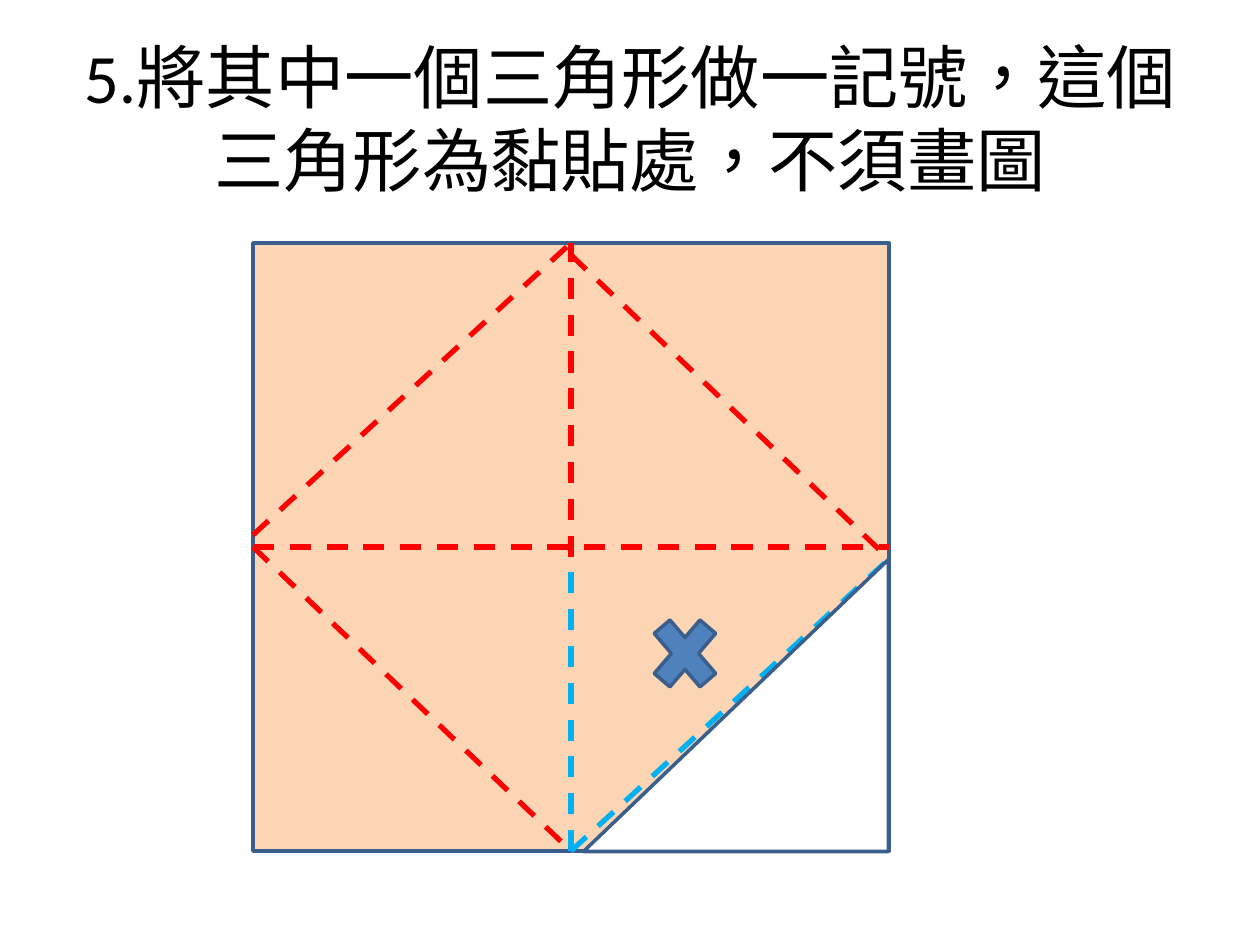
from lxml.etree import SubElement
from pptx import Presentation
from pptx.dml.color import RGBColor
from pptx.enum.dml import MSO_LINE
from pptx.enum.lang import MSO_LANGUAGE_ID
from pptx.enum.shapes import MSO_CONNECTOR, MSO_SHAPE
from pptx.enum.text import MSO_ANCHOR, PP_ALIGN
from pptx.oxml.ns import qn
from pptx.util import Emu, Pt

THEME = {
    "font": "Calibri", "title_size": Pt(39.6), "title": RGBColor.from_string("000000"),
    "paper": RGBColor.from_string("FCD5B5"), "cutout": RGBColor.from_string("FFFFFF"),
    "mark": RGBColor.from_string("4F81BD"), "outline": RGBColor.from_string("3A5F8C"),
    "fold": RGBColor.from_string("FF0000"), "glue": RGBColor.from_string("00B0F0"),
    "outline_width": Pt(2), "fold_width": Pt(3),
}


def px(count):
    return Emu(round(count * 914400 / 126))


def add_outlined(kind, left, top, width, height, fill):
    shape = page.shapes.add_shape(kind, px(left), px(top), px(width), px(height))
    shape.shadow.inherit = False
    shape.fill.solid()
    shape.fill.fore_color.rgb = THEME[fill]
    shape.line.color.rgb = THEME["outline"]
    shape.line.width = THEME["outline_width"]
    return shape


deck = Presentation()
deck.slide_width, deck.slide_height = px(1260), px(945)
page = deck.slides.add_slide(deck.slide_layouts[6])

box = page.shapes.add_textbox(px(63), px(38), px(1134), px(158))
frame = box.text_frame
frame.word_wrap = True
frame.vertical_anchor = MSO_ANCHOR.MIDDLE
para = frame.paragraphs[0]
para.alignment = PP_ALIGN.CENTER
span = para.add_run()
span.text = "5.將其中一個三角形做一記號，這個三角形為黏貼處，不須畫圖"
title_format = {"name": THEME["font"], "size": THEME["title_size"],
                "language_id": MSO_LANGUAGE_ID.TRADITIONAL_CHINESE}
for name, value in title_format.items():
    setattr(span.font, name, value)
span.font.color.rgb = THEME["title"]

left, top, width, height = 253, 243, 636, 608
right, bottom = left + width, top + height
center, middle = left + width // 2, top + height // 2
offset = 12
paper = add_outlined(MSO_SHAPE.RECTANGLE, left, top, width, height, "paper")

side_middles = {(center, top): 0, (left, middle): 1, (center, bottom): 2, (right, middle): 3}
folds = [
    ((left, middle), (right, middle), "fold"),
    ((center, bottom), (center, top), "fold"),
    ((left, middle), (center, bottom), "fold"),
    ((center, top + offset), (right, middle + offset), "fold"),
    ((center, bottom), (right, middle + offset), "glue"),
    ((left, middle - offset), (center, top), "fold"),
    ((center, bottom), (center, middle + offset), "glue"),
]
for start, end, color in folds:
    fold = page.shapes.add_connector(MSO_CONNECTOR.STRAIGHT, *map(px, start + end))
    if start in side_middles:
        fold.begin_connect(paper, side_middles[start])
    if end in side_middles:
        fold.end_connect(paper, side_middles[end])
    fold.line.color.rgb = THEME[color]
    fold.line.width = THEME["fold_width"]
    fold.line.dash_style = MSO_LINE.DASH
    SubElement(fold._element.spPr, qn("a:effectLst"))

cutout = add_outlined(MSO_SHAPE.RIGHT_TRIANGLE, 590, 553, 292, 305, "cutout")
cutout.rotation = 270
add_outlined(MSO_SHAPE.MATH_MULTIPLY, 641, 602, 88, 103, "mark")

deck.save("out.pptx")
